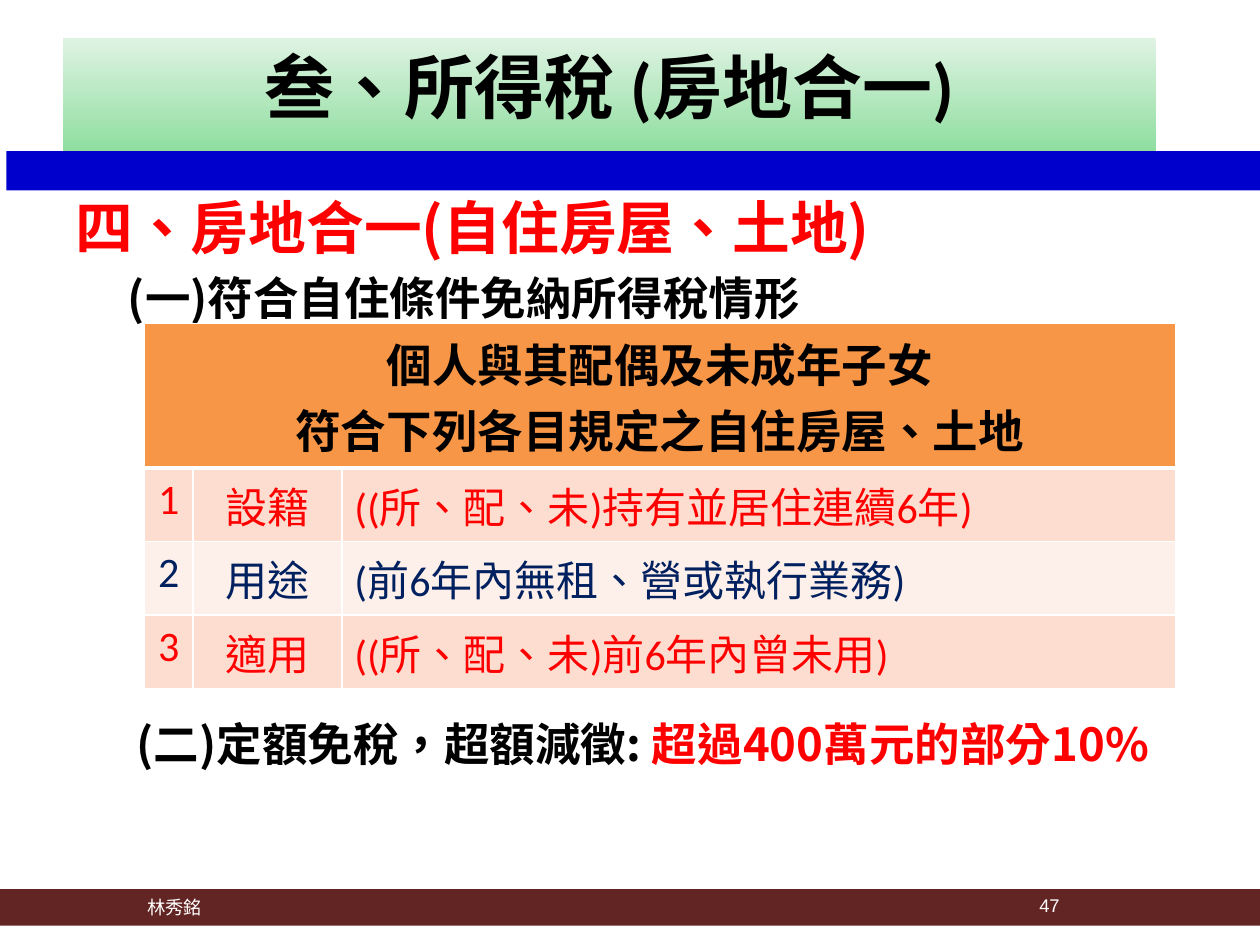
from pptx import Presentation
from pptx.dml.color import RGBColor as RGB
from pptx.enum.shapes import MSO_SHAPE as Form
from pptx.enum.text import MSO_ANCHOR as Anchor, PP_ALIGN as Align
from pptx.oxml import parse_xml
from pptx.oxml.ns import nsdecls, qn
from pptx.util import Pt

CJK = "Noto Sans CJK SC"
RED, BLACK, WHITE, NAVY = "FF0000", "000000", "FFFFFF", "002060"
ROWS = [
    ("1", "設籍", "((所、配、未)持有並居住連續6年)", RED, "FCDDCF"),
    ("2", "用途", "(前6年內無租、營或執行業務)", NAVY, "FDEFE9"),
    ("3", "適用", "((所、配、未)前6年內曾未用)", RED, "FCDDCF"),
]


def tint(hue):
    return RGB.from_string(hue)


def put(item, form):
    for key, value in form.items():
        setattr(item, key, value)


def write(para, text, hue, size, bold=False, name="Calibri"):
    run = para.add_run()
    run.text = text
    put(run.font, {"size": Pt(size), "bold": bold, "name": name})
    run.font.color.rgb = tint(hue)
    # Traditional Chinese centres its punctuation
    props = run.font._element
    props.set("lang", "zh-TW")
    props.find(qn("a:latin")).addnext(
        parse_xml(f'<a:ea {nsdecls("a")} typeface="{CJK}"/>'))


def frame(shape, anchor):
    text = shape.text_frame
    put(text, {"word_wrap": True, "vertical_anchor": anchor})
    return text


def bar(slide, box, hue=None):
    shape = slide.shapes.add_shape(Form.RECTANGLE, *map(Pt, box))
    shape.shadow.inherit = False
    shape.line.fill.background()
    if hue:
        shape.fill.solid()
        shape.fill.fore_color.rgb = tint(hue)
    return shape


def edge(cell, base=1):
    props = cell._tc.get_or_add_tcPr()
    for side, width in (("L", 1), ("R", 1), ("T", 1), ("B", base)):
        props.append(parse_xml(
            f'<a:ln{side} {nsdecls("a")} w="{Pt(width)}"><a:solidFill>'
            f'<a:srgbClr val="{WHITE}"/></a:solidFill></a:ln{side}>'))


def paint(cell, hue):
    cell.fill.solid()
    cell.fill.fore_color.rgb = tint(hue)


def head(slide, left, top, width, height):
    # Title on a green gradient
    shape = bar(slide, (left, top, width, height))
    shape.fill.gradient()
    shape.fill.gradient_angle = 270
    for stop, hue, spot in zip(shape.fill.gradient_stops,
                               ("DFF3E3", "8FDEA0"), (0, 1)):
        stop.color.rgb = tint(hue)
        stop.position = spot
    para = frame(shape, Anchor.TOP).paragraphs[0]
    para.alignment = Align.CENTER
    write(para, "叁、所得稅 (房地合一)", BLACK, 40, True)
    # Blue band under the title
    bar(slide, (3.6, top + height, 720, 22.4), "0000CC")


def body(slide, *box):
    # Headings; the wide gap leaves room for the table
    text = frame(slide.shapes.add_textbox(*map(Pt, box)), Anchor.TOP)
    lines = [
        (6.6, 0, 33, [("四、房地合一(自住房屋、土地)", RED)]),
        (5.2, 30, 26, [("(一)符合自住條件免納所得稅情形", BLACK)]),
        (224, 35, 26, [("(二)定額免稅，超額減徵: ", BLACK),
                       ("超過400萬元的部分10%", RED)]),
    ]
    for at, (gap, dent, size, runs) in enumerate(lines):
        para = text.add_paragraph() if at else text.paragraphs[0]
        put(para, {"space_before": Pt(gap), "line_spacing": 1.0})
        para._p.get_or_add_pPr().set("indent", str(Pt(dent)))
        for words, hue in runs:
            write(para, words, hue, size, True, CJK)


def grid(slide, *box):
    table = slide.shapes.add_table(4, 3, *map(Pt, box)).table
    for col, width in zip(table.columns, (28, 85, 476.6)):
        col.width = Pt(width)
    for row, height in zip(table.rows, (82.5, 42, 42, 42)):
        row.height = Pt(height)
    # Merged header
    top = table.cell(0, 0)
    top.merge(table.cell(0, 2))
    for cell in table.rows[0].cells:
        edge(cell, 3)
        paint(cell, "F79646")
    text = top.text_frame
    for para, words in (
            (text.paragraphs[0], "個人與其配偶及未成年子女"),
            (text.add_paragraph(), "符合下列各目規定之自住房屋、土地")):
        para.alignment = Align.CENTER
        write(para, words, BLACK, 26, True)
    # Conditions
    for y, (*words, hue, fill) in enumerate(ROWS, 1):
        for x, word in enumerate(words):
            cell = table.cell(y, x)
            edge(cell)
            paint(cell, fill)
            para = cell.text_frame.paragraphs[0]
            para.alignment = Align.LEFT if x == 2 else Align.CENTER
            write(para, word, hue, 24)


def foot(slide, left, top, width, height):
    # Author and page number on a dark strip
    shape = bar(slide, (left, top, width, height), "632523")
    page = slide.shapes.add_textbox(
        *map(Pt, (left + 586.8, top, 38.2, 18.7)))
    for item, words, inset in ((shape, "林秀銘", 84.2), (page, "47", 7.2)):
        text = frame(item, Anchor.MIDDLE)
        text.margin_left = Pt(inset)
        para = text.paragraphs[0]
        para.alignment = Align.LEFT
        write(para, words, WHITE, 10.5, name="Arial")


def main():
    deck = Presentation()
    put(deck, {"slide_width": Pt(720), "slide_height": Pt(540)})
    slide = deck.slides.add_slide(deck.slide_layouts[6])
    body(slide, 36, 105.8, 648, 373.7)
    grid(slide, 82.4, 185, 589.6, 208.5)
    foot(slide, 0, 508.1, 720, 20.9)
    head(slide, 36, 21.6, 624.4, 64.8)
    deck.save("out.pptx")


if __name__ == "__main__":
    main()
